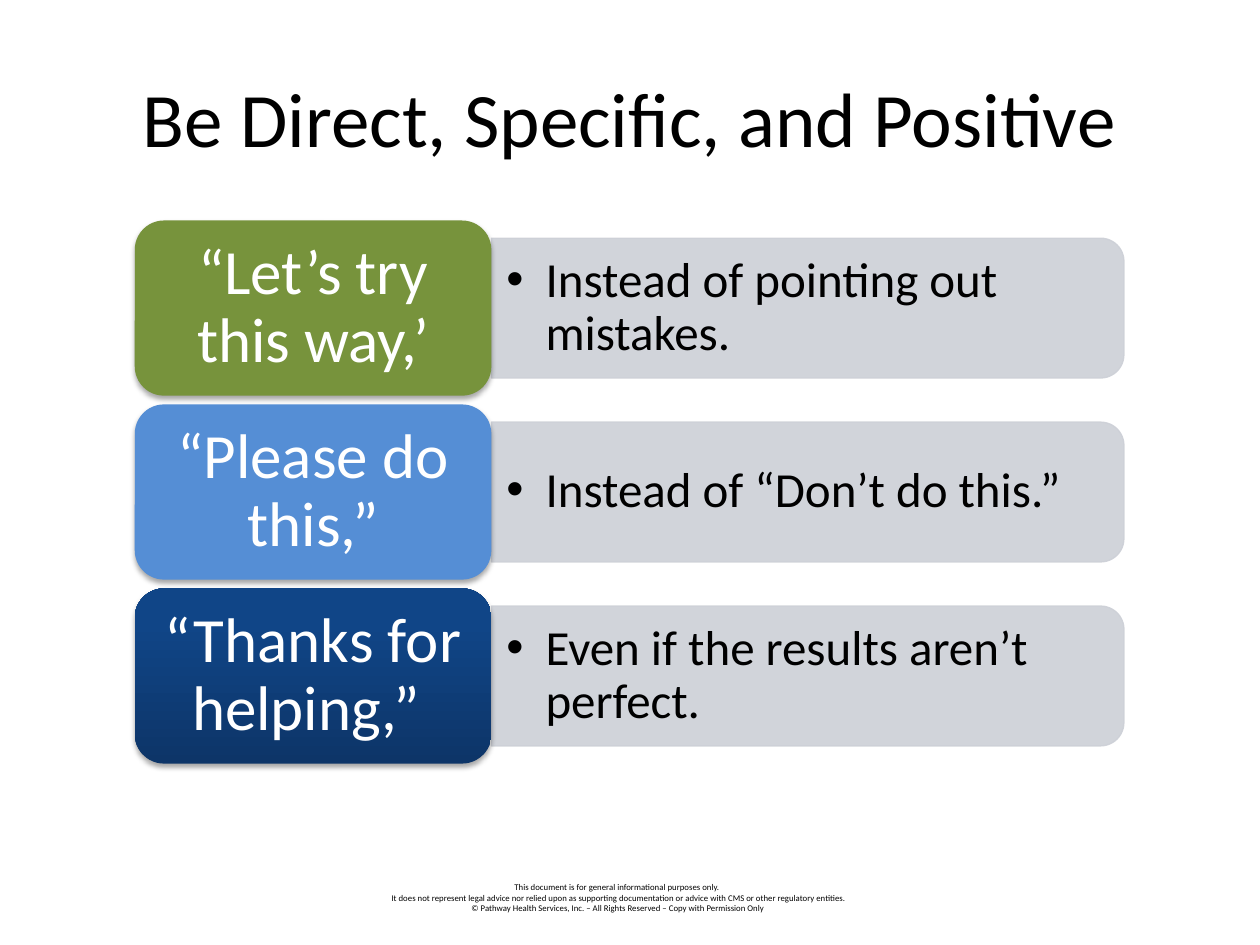
from copy import deepcopy

from lxml import etree
from pptx import Presentation
from pptx.dml.color import RGBColor
from pptx.enum.shapes import MSO_SHAPE
from pptx.enum.text import MSO_ANCHOR, PP_ALIGN
from pptx.oxml.ns import qn
from pptx.util import Inches, Pt

CENTER, LEFT = PP_ALIGN.CENTER, PP_ALIGN.LEFT
MIDDLE, TOP = MSO_ANCHOR.MIDDLE, MSO_ANCHOR.TOP
CARD_SHAPE = MSO_SHAPE.ROUNDED_RECTANGLE
BAR_SHAPE = MSO_SHAPE.ROUND_2_SAME_RECTANGLE

TITLE = "Be Direct, Specific, and Positive"
PHRASES = [
    ("“Let’s try this way,’", "Instead of pointing out mistakes.", "green"),
    ("“Please do this,”", "Instead of “Don’t do this.”", "blue"),
    ("“Thanks for helping,” ", "Even if the results aren’t perfect.", "navy"),
]
DISCLAIMER = [
    "This document is for general informational purposes only.  ",
    "It does not represent legal advice nor relied upon as supporting documentation "
    "or advice with CMS or other regulatory entities.",
    "© Pathway Health Services, Inc. – All Rights Reserved – Copy with Permission Only ",
]
COLORS = {"black": "000000", "white": "FFFFFF", "gray": "CDD0D7",
          "green": "77933C", "blue": "558ED5"}
NAVY_STOPS = [(0, "0D3568"), (0.8, "104587"), (1, "0E458A")]
FONT = "Calibri"

CARD_LEFT, CARD_TOP, CARD_WIDTH, CARD_HEIGHT = 1.07, 1.75, 2.83, 1.39
ROW_PITCH = 1.46
BAR_LENGTH, BAR_HEIGHT = 5.02, 1.11
REPLY_WIDTH, REPLY_HEIGHT = 4.97, 1
BULLET_INDENT = 0.31


def box(left, top, width, height):
    return [Inches(value) for value in (left, top, width, height)]


def write(frame, text, size, color, align=CENTER, anchor=MIDDLE, insets=(0.1, 0.05), spacing=None):
    frame.text = text
    frame.word_wrap = True
    frame.vertical_anchor = anchor
    frame.margin_left = frame.margin_right = Inches(insets[0])
    frame.margin_top = frame.margin_bottom = Inches(insets[1])
    for paragraph in frame.paragraphs:
        paragraph.alignment = align
        paragraph.line_spacing = spacing
        for run in paragraph.runs:
            run.font.name = FONT
            run.font.size = Pt(size)
            run.font.color.rgb = RGBColor.from_string(COLORS[color])


def add_bullet(paragraph):
    properties = paragraph._p.get_or_add_pPr()
    properties.set("marL", str(Inches(BULLET_INDENT)))
    properties.set("indent", str(-Inches(BULLET_INDENT)))
    etree.SubElement(properties, qn("a:buFont"), typeface="Arial")
    etree.SubElement(properties, qn("a:buChar"), char="•")


def add_shadow(card):
    effects = card._element.spPr.find(qn("a:effectLst"))
    shadow = etree.SubElement(effects, qn("a:outerShdw"), blurRad=str(Pt(3.1)),
                              dist=str(Pt(1.8)), dir="5400000", rotWithShape="0")
    shade = etree.SubElement(shadow, qn("a:srgbClr"), val=COLORS["black"])
    etree.SubElement(shade, qn("a:alpha"), val="35000")


def fill_navy(fill):
    fill.gradient()
    fill.gradient_angle = 90
    first_stop = fill._xPr.find(".//" + qn("a:gs"))
    first_stop.addnext(deepcopy(first_stop))
    for stop, (position, color) in zip(fill.gradient_stops, NAVY_STOPS):
        stop.position = position
        stop.color.rgb = RGBColor.from_string(color)


def add_bar(slide, middle):
    center = CARD_LEFT + CARD_WIDTH + BAR_LENGTH / 2
    bar = slide.shapes.add_shape(BAR_SHAPE, *box(
        center - BAR_HEIGHT / 2, middle - BAR_LENGTH / 2, BAR_HEIGHT, BAR_LENGTH))
    bar.rotation = 90
    bar.shadow.inherit = False
    bar.fill.solid()
    bar.line.width = Pt(0.75)
    for paint in (bar.fill.fore_color, bar.line.color):
        paint.rgb = RGBColor.from_string(COLORS["gray"])
    for color in bar._element.spPr.iter(qn("a:srgbClr")):
        etree.SubElement(color, qn("a:alpha"), val="90000")


def add_row(slide, index, phrase, reply, color):
    top = CARD_TOP + index * ROW_PITCH
    middle = top + CARD_HEIGHT / 2
    add_bar(slide, middle)

    reply_box = slide.shapes.add_textbox(*box(
        CARD_LEFT + CARD_WIDTH, middle - REPLY_HEIGHT / 2, REPLY_WIDTH, REPLY_HEIGHT))
    write(reply_box.text_frame, reply, 28, "black", LEFT, insets=(0.12, 0.06), spacing=0.9)
    add_bullet(reply_box.text_frame.paragraphs[0])

    card = slide.shapes.add_shape(CARD_SHAPE, *box(CARD_LEFT, top, CARD_WIDTH, CARD_HEIGHT))
    card.shadow.inherit = False
    card.line.fill.background()
    if color == "navy":
        fill_navy(card.fill)
    else:
        card.fill.solid()
        card.fill.fore_color.rgb = RGBColor.from_string(COLORS[color])
    add_shadow(card)
    write(card.text_frame, phrase, 36, "white", insets=(0.15, 0.07), spacing=0.9)


def main():
    """Build the slide on direct, specific and positive phrases."""
    deck = Presentation()
    deck.slide_width, deck.slide_height = Inches(10), Inches(7.5)
    slide = deck.slides.add_slide(deck.slide_layouts[5])

    title = slide.shapes.title
    title.left, title.top, title.width, title.height = box(0.5, 0.3, 9, 1.25)
    write(title.text_frame, TITLE, 44, "black")

    for index, phrase in enumerate(PHRASES):
        add_row(slide, index, *phrase)

    disclaimer = slide.shapes.add_textbox(*box(2.75, 6.95, 4.33, 0.35))
    write(disclaimer.text_frame, "\n".join(DISCLAIMER), 5, "black", anchor=TOP)

    deck.save("out.pptx")


if __name__ == "__main__":
    main()
